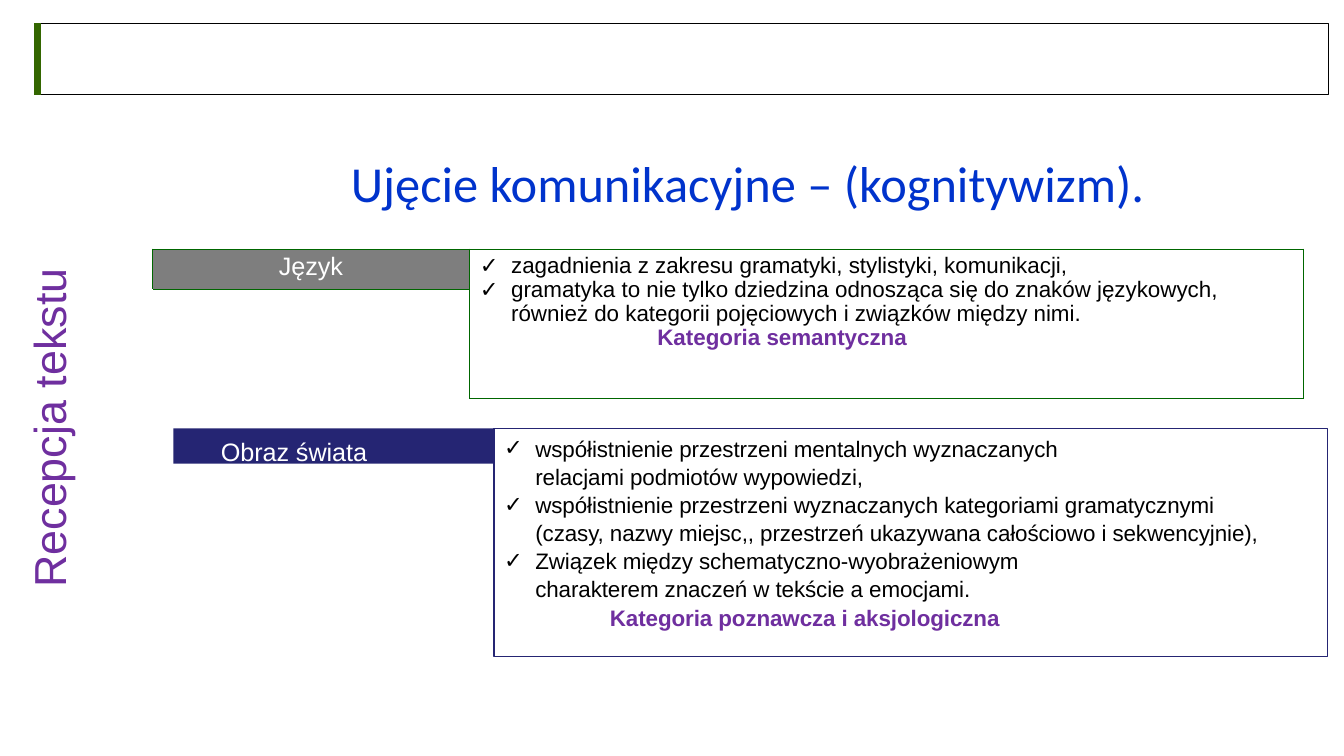
from lxml.etree import SubElement
from pptx import Presentation
from pptx.dml.color import RGBColor
from pptx.enum.shapes import MSO_CONNECTOR as Connector, MSO_SHAPE as Shape
from pptx.enum.text import MSO_ANCHOR as Anchor, PP_ALIGN as Align
from pptx.oxml.ns import qn
from pptx.util import Inches, Pt

PURPLE, GREEN, NAVY = "6F2F9F", "006600", "252573"
BODY = {"size": Pt(16), "name": "Arial"}
LABEL = {"size": Pt(18), "name": "Arial"}
CATEGORY = {**BODY, "bold": True}
INDENT, HANGING = 0.41, -0.31

LANGUAGE_POINTS = [
    ("zagadnienia z zakresu gramatyki, stylistyki, komunikacji,", True),
    ("gramatyka to nie tylko dziedzina odnosząca się do znaków językowych, "
     "również do kategorii pojęciowych i związków między nimi.", True),
]
WORLD_POINTS = [
    ("współistnienie przestrzeni mentalnych wyznaczanych", True),
    ("relacjami podmiotów wypowiedzi,", False),
    ("współistnienie przestrzeni wyznaczanych kategoriami gramatycznymi "
     "(czasy, nazwy miejsc,, przestrzeń ukazywana całościowo i sekwencyjnie),", True),
    ("Związek między schematyczno-wyobrażeniowym", True),
    ("charakterem znaczeń w tekście a emocjami.", False),
]


def color(value):
    return RGBColor.from_string(value)


def set_values(target, values):
    for name, value in values.items():
        setattr(target, name, value)


def set_margins(target, left=0, top=0, right=0, bottom=0):
    set_values(target, {"margin_left": Inches(left), "margin_top": Inches(top),
                        "margin_right": Inches(right), "margin_bottom": Inches(bottom)})


def write(paragraph, text, font, hue, indent=0, bullet=False, spacing=0, **layout):
    properties = paragraph._p.get_or_add_pPr()
    properties.set("marL", str(Inches(indent)))
    properties.set("indent", str(Inches(HANGING if bullet else 0)))
    set_values(paragraph, layout)
    if bullet:
        SubElement(properties, qn("a:buFont"), typeface="Arial")
        SubElement(properties, qn("a:buChar"), char="✓")
    run = paragraph.add_run()
    run.text = text
    set_values(run.font, font)
    run.font.color.rgb = color(hue)
    if spacing:
        run._r.get_or_add_rPr().set("spc", str(spacing))


def write_points(frame, points, category, category_indent, line_spacing, spacing=0):
    paragraph = frame.paragraphs[0]
    for text, bullet in points:
        write(paragraph, text, BODY, "000000", INDENT, bullet, spacing,
              line_spacing=line_spacing)
        paragraph = frame.add_paragraph()
    write(paragraph, category, CATEGORY, PURPLE, category_indent,
          spacing=spacing, line_spacing=line_spacing)


def add_box(slide, left, top, width, height, fill=None, line=None):
    shape = slide.shapes.add_shape(Shape.RECTANGLE, Inches(left), Inches(top),
                                   Inches(width), Inches(height))
    shape.shadow.inherit = False
    if fill:
        shape.fill.solid()
        shape.fill.fore_color.rgb = color(fill)
    else:
        shape.fill.background()
    if line:
        shape.line.color.rgb = color(line)
        shape.line.width = Pt(0.75)
    else:
        shape.line.fill.background()
    return shape


def add_text(slide, left, top, width, height):
    shape = slide.shapes.add_textbox(Inches(left), Inches(top), Inches(width), Inches(height))
    shape.text_frame.word_wrap = True
    set_margins(shape.text_frame)
    return shape.text_frame


def add_header(slide, left, top, width, height):
    add_box(slide, left, top, width, height, line="000000")
    bar = slide.shapes.add_connector(Connector.STRAIGHT, Inches(left), Inches(top),
                                     Inches(left), Inches(top + height))
    bar.line.color.rgb = color("336600")
    bar.line.width = Pt(5)
    SubElement(bar._element.spPr, qn("a:effectLst"))


def add_title(slide, left, top, width, height):
    frame = add_text(slide, left, top, width, height)
    frame.vertical_anchor = Anchor.MIDDLE
    set_margins(frame, top=0.02)
    write(frame.paragraphs[0], "Ujęcie komunikacyjne – (kognitywizm).",
          {"size": Pt(36), "name": "Calibri"}, "0033CC", 0.07)


def set_borders(cell, **widths):
    properties = cell._tc.get_or_add_tcPr()
    for side in "LRTB":
        if side in widths:
            line = SubElement(properties, qn("a:ln" + side), w=str(Pt(widths[side])))
            fill = SubElement(line, qn("a:solidFill"))
            SubElement(fill, qn("a:srgbClr"), val=GREEN)


def add_language_table(slide, left, top, width, height):
    table = slide.shapes.add_table(2, 2, Inches(left), Inches(top),
                                   Inches(width), Inches(height)).table
    set_values(table, {"first_row": False, "horz_banding": False})
    label_width, label_height = 3.15, 0.4
    for column, size in zip(table.columns, (label_width, width - label_width)):
        column.width = Inches(size)
    for row, size in zip(table.rows, (label_height, height - label_height)):
        row.height = Inches(size)
    label, points = table.cell(0, 0), table.cell(0, 1)
    below_label, merged = table.cell(1, 0), table.cell(1, 1)
    points.merge(merged)
    set_borders(label, L=0.75, R=1, T=0.75, B=0.75)
    set_borders(below_label, R=0.75, T=0.75)
    for cell in (points, merged):
        set_borders(cell, L=1, R=0.75, T=0.75, B=0.75)
    for cell in (points, merged, below_label):
        cell.fill.background()
    label.fill.solid()
    label.fill.fore_color.rgb = color("7E7E7E")
    set_margins(label, top=0.04)
    write(label.text_frame.paragraphs[0], "Język", LABEL, "FFFFFF",
          spacing=-5, alignment=Align.CENTER)
    set_margins(points, top=0.05, right=0.25)
    write_points(points.text_frame, LANGUAGE_POINTS, "Kategoria semantyczna", 1.86, 0.97)


def add_world_view(slide, left, top, width, height):
    label_width = 3.18
    label = add_box(slide, left, top, label_width, 0.35, fill=NAVY).text_frame
    label.vertical_anchor = Anchor.TOP
    set_margins(label, top=0.08)
    write(label.paragraphs[0], "Obraz świata", LABEL, "FFFFFF", 0.47,
          spacing=-5, alignment=Align.LEFT)
    points_left, points_width = left + label_width, width - label_width
    add_box(slide, points_left, top, points_width, height, line=NAVY)
    points = add_text(slide, points_left, top + 0.03, points_width, 1.9)
    set_margins(points, top=0.02, right=0.5)
    write_points(points, WORLD_POINTS, "Kategoria poznawcza i aksjologiczna", 1.15, 1.05, -5)


def add_side_heading(slide, left, top, width, height):
    frame = add_text(slide, left, top, width, height)
    frame._txBody.bodyPr.set("vert", "vert270")
    write(frame.paragraphs[0], "Recepcja tekstu", {"size": Pt(32), "name": "Arial"},
          PURPLE, 0.01, line_spacing=Pt(36.4))


def main():
    presentation = Presentation()
    presentation.slide_width = Inches(13.33)
    presentation.slide_height = Inches(7.5)
    slide = presentation.slides.add_slide(presentation.slide_layouts[6])
    add_header(slide, 0.37, 0.23, 12.81, 0.71)
    add_title(slide, 3.41, 1.48, 8.59, 0.63)
    add_language_table(slide, 1.51, 2.47, 11.42, 1.45)
    add_world_view(slide, 1.72, 4.25, 11.45, 2.26)
    add_side_heading(slide, 0.24, 2.65, 0.5, 3.19)
    presentation.save("out.pptx")


if __name__ == "__main__":
    main()
